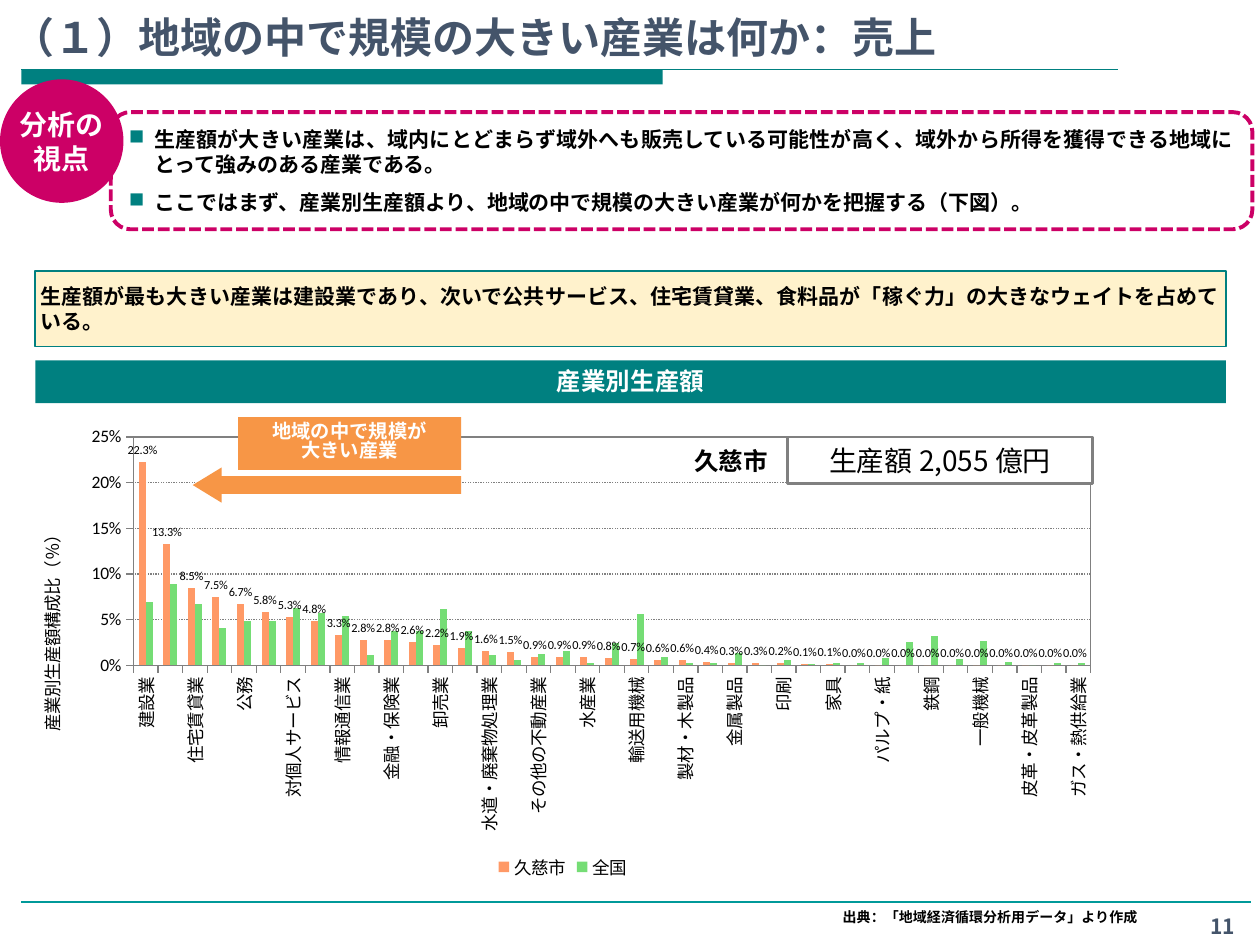
from dataclasses import dataclass
from typing import Optional

import lxml.etree
import pptx
import pptx.chart.data
import pptx.dml.color
import pptx.enum.chart
import pptx.enum.dml
import pptx.enum.shapes
import pptx.enum.text
import pptx.oxml.ns
import pptx.util

Align = pptx.enum.text.PP_ALIGN
Anchor = pptx.enum.text.MSO_ANCHOR
Preset = pptx.enum.shapes.MSO_SHAPE
Dash = pptx.enum.dml.MSO_LINE
Pt = pptx.util.Pt
qualified = pptx.oxml.ns.qn


@dataclass(frozen=True)
class Theme:
    font: str = "Noto Sans CJK JP"
    chart_font: str = "Calibri"
    teal: str = "008080"
    rule: str = "009999"
    magenta: str = "CC0066"
    navy: str = "44546A"
    cream: str = "FFF2CC"
    orange: str = "F79646"
    gray: str = "808080"
    black: str = "000000"
    white: str = "FFFFFF"
    city: str = "FF9966"
    nation: str = "75DD75"
    title: float = 24
    large: float = 16
    heading: float = 14
    body: float = 12
    callout: float = 11
    axis: float = 10
    source: float = 8
    label: float = 7


@dataclass(frozen=True)
class Area:
    column: float
    row: float
    columns: float
    rows: float

    def place(self) -> tuple:
        return tuple(map(cell, (self.column, self.row, self.columns, self.rows)))


@dataclass(frozen=True)
class Panel:
    preset: Preset
    area: Area
    fill: Optional[str] = None
    line: Optional[str] = None
    weight: float = 1
    dash: Optional[Dash] = None


THEME = Theme()
COLUMNS, ROWS = 100, 75
CELL = pptx.util.Inches(10) / COLUMNS
CITY = "久慈市"
NARROW = (0.4, 0.5)

INDUSTRIES = (
    "建設業 公共サービス 住宅賃貸業 食料品 公務 小売業 対個人サービス 対事業所サービス "
    "情報通信業 農業 金融・保険業 運輸業 卸売業 電気機械 水道・廃棄物処理業 窯業・土石製品 "
    "その他の不動産業 その他の製造業 水産業 石油・石炭製品 輸送用機械 電気業 製材・木製品 "
    "衣服・身回品 金属製品 林業 印刷 鉱業 家具 繊維 パルプ・紙 化学 鉄鋼 非鉄金属 "
    "一般機械 精密機械 皮革・皮革製品 ゴム製品 ガス・熱供給業"
).split()
CITY_SHARES = [
    0.223, 0.133, 0.085, 0.075, 0.067, 0.058, 0.053, 0.048, 0.033, 0.028,
    0.028, 0.026, 0.022, 0.019, 0.016, 0.015, 0.009, 0.009, 0.009, 0.008,
    0.007, 0.006, 0.006, 0.004, 0.003, 0.003, 0.002, 0.001, 0.001,
] + [0] * 10
NATION_SHARES = [
    0.069, 0.089, 0.067, 0.041, 0.048, 0.049, 0.063, 0.057, 0.054, 0.011,
    0.038, 0.038, 0.062, 0.038, 0.011, 0.006, 0.012, 0.016, 0.002, 0.025,
    0.056, 0.009, 0.002, 0.002, 0.014, 0, 0.006, 0.001, 0.002, 0.002,
    0.008, 0.026, 0.032, 0.007, 0.027, 0.004, 0, 0.003, 0.002,
]


def cell(count: float) -> int:
    return round(count * CELL)


def color(value: str) -> pptx.dml.color.RGBColor:
    return pptx.dml.color.RGBColor.from_string(value)


def element(parent, tag: str, **attributes: str):
    return lxml.etree.SubElement(parent, qualified(tag), **attributes)


def add_bullet(paragraph) -> None:
    properties = paragraph._p.get_or_add_pPr()
    properties.set("marL", str(cell(2)))
    properties.set("indent", str(cell(-2)))
    element(element(properties, "a:buClr"), "a:srgbClr", val=THEME.teal)
    element(properties, "a:buChar", char="■")


def write(box, text: str, *, size: float, ink: str = THEME.black, bold: bool = True,
          align: Align = Align.LEFT, anchor: Anchor = Anchor.TOP, wrap: bool = True,
          insets: tuple = (1, 0.5), bullet: bool = False, leading: Optional[float] = None) -> None:
    frame = box.text_frame
    frame.word_wrap = wrap
    frame.vertical_anchor = anchor
    frame.margin_left = frame.margin_right = cell(insets[0])
    frame.margin_top = frame.margin_bottom = cell(insets[1])
    for index, line in enumerate(text.split("\n")):
        paragraph = frame.add_paragraph() if index else frame.paragraphs[0]
        paragraph.text = line
        paragraph.alignment = align
        if bullet:
            add_bullet(paragraph)
            paragraph.space_before = Pt(3 if index else 0)
            paragraph.space_after = Pt(4)
        if leading:
            paragraph.line_spacing = Pt(leading)
        for line_break in paragraph._p.findall(qualified("a:br")):
            element(line_break, "a:rPr", sz=str(int(size * 100)))
        for span in paragraph.runs:
            span.font.size = Pt(size)
            span.font.bold = bold
            span.font.name = THEME.font
            span.font.color.rgb = color(ink)
            element(span.font._element, "a:ea", typeface=THEME.font)


def draw_panel(page, panel: Panel):
    box = page.shapes.add_shape(panel.preset, *panel.area.place())
    box.shadow.inherit = False
    if panel.fill:
        box.fill.solid()
        box.fill.fore_color.rgb = color(panel.fill)
    else:
        box.fill.background()
    if panel.line:
        box.line.color.rgb = color(panel.line)
        box.line.width = Pt(panel.weight)
        if panel.dash:
            box.line.dash_style = panel.dash
    else:
        box.line.fill.background()
    return box


def draw_text(page, area: Area):
    return page.shapes.add_textbox(*area.place())


def draw_rule(page, start: float, end: float, row: float, ink: str) -> None:
    rule = page.shapes.add_connector(pptx.enum.shapes.MSO_CONNECTOR.STRAIGHT,
                                     cell(start), cell(row), cell(end), cell(row))
    rule.line.color.rgb = color(ink)
    rule.line.width = Pt(0.75)
    element(rule._element.spPr, "a:effectLst")


def set_plot_area(chart, left: float, top: float, width: float, height: float) -> None:
    plot_area = chart._chartSpace.chart.plotArea
    for old in plot_area.findall(qualified("c:layout")):
        plot_area.remove(old)
    layout = lxml.etree.Element(qualified("c:layout"))
    plot_area.insert(0, layout)
    manual = element(layout, "c:manualLayout")
    settings = dict(layoutTarget="inner", xMode="edge", yMode="edge",
                    x=left, y=top, w=width, h=height)
    for name, value in settings.items():
        element(manual, f"c:{name}", val=str(value))
    outline = element(element(plot_area, "c:spPr"), "a:ln", w=str(Pt(0.75)))
    element(element(outline, "a:solidFill"), "a:srgbClr", val=THEME.gray)


def draw_chart(page, area: Area) -> None:
    data = pptx.chart.data.CategoryChartData()
    data.categories = INDUSTRIES
    data.add_series(CITY, CITY_SHARES)
    data.add_series("全国", NATION_SHARES)
    chart = page.shapes.add_chart(pptx.enum.chart.XL_CHART_TYPE.COLUMN_CLUSTERED,
                                  *area.place(), data).chart
    chart.has_title = False
    chart.font.name = THEME.chart_font
    chart.font.size = Pt(THEME.axis)
    chart.font.color.rgb = color(THEME.black)
    chart.has_legend = True
    chart.legend.position = pptx.enum.chart.XL_LEGEND_POSITION.BOTTOM
    chart.legend.include_in_layout = False

    plot = chart.plots[0]
    plot.gap_width, plot.overlap, plot.vary_by_categories = 150, 0, False
    for series, ink in zip(plot.series, (THEME.city, THEME.nation)):
        series.invert_if_negative = False
        series.format.fill.solid()
        series.format.fill.fore_color.rgb = color(ink)
    labels = plot.series[0].data_labels
    labels.show_value = True
    labels.number_format, labels.number_format_is_linked = "0.0%", False
    labels.position = pptx.enum.chart.XL_LABEL_POSITION.OUTSIDE_END
    labels.font.size = Pt(THEME.label)

    shares, industries = chart.value_axis, chart.category_axis
    shares.minimum_scale, shares.maximum_scale, shares.major_unit = 0, 0.25, 0.05
    shares.tick_labels.number_format = "0%"
    shares.tick_labels.number_format_is_linked = False
    shares.major_gridlines.format.line.color.rgb = color(THEME.gray)
    shares.major_gridlines.format.line.dash_style = Dash.ROUND_DOT
    shares.major_gridlines.format.line.width = Pt(0.75)
    title = shares.axis_title.text_frame
    title.text = "産業別生産額構成比（％）"
    title.paragraphs[0].font.size = Pt(THEME.axis)
    title.paragraphs[0].font.bold = False
    for axis in (shares, industries):
        axis.major_tick_mark = pptx.enum.chart.XL_TICK_MARK.OUTSIDE
        axis.format.line.color.rgb = color(THEME.gray)
    industries.tick_labels.font.size = Pt(THEME.axis)
    industries._element.txPr.bodyPr.set("rot", "-5400000")
    set_plot_area(chart, 0.11, 0.04, 0.87, 0.49)


def main() -> None:
    deck = pptx.Presentation()
    deck.slide_width, deck.slide_height = cell(COLUMNS), cell(ROWS)
    page = deck.slides.add_slide(deck.slide_layouts[6])

    draw_panel(page, Panel(Preset.RECTANGLE, Area(1.7, 5.5, 50.9, 1.2), THEME.teal))
    draw_rule(page, 1.7, 88.7, 5.5, THEME.teal)
    draw_rule(page, 1.7, 99.3, 71.6, THEME.rule)
    draw_chart(page, Area(1, 33.2, 87.3, 37))

    write(draw_text(page, Area(0, 0, 86.9, 5.4)), "（１）地域の中で規模の大きい産業は何か：売上",
          size=THEME.title, ink=THEME.navy, anchor=Anchor.BOTTOM)
    write(draw_text(page, Area(65.9, 71.6, 25.7, 2.4)),
          "出典：「地域経済循環分析用データ」より作成", size=THEME.source)

    heading = draw_panel(page, Panel(Preset.RECTANGLE, Area(2.8, 28.6, 94.5, 3.4), THEME.teal))
    write(heading, "産業別生産額", size=THEME.heading, ink=THEME.white, align=Align.CENTER)

    finding = draw_panel(page, Panel(Preset.RECTANGLE, Area(2.8, 21.5, 94.5, 6),
                                     THEME.cream, THEME.teal))
    write(finding, "生産額が最も大きい産業は建設業であり、次いで公共サービス、住宅賃貸業、食料品が"
          "「稼ぐ力」の大きなウェイトを占めている。", size=THEME.body, align=Align.JUSTIFY,
          anchor=Anchor.MIDDLE, insets=NARROW)

    arrow = draw_panel(page, Panel(Preset.LEFT_ARROW, Area(15.3, 37.1, 21.3, 2.8), THEME.orange))
    arrow.adjustments[0], arrow.adjustments[1] = 0.5, 0.82
    callout = draw_panel(page, Panel(Preset.RECTANGLE, Area(18.9, 33.1, 17.7, 4.2), THEME.orange))
    write(callout, "地域の中で規模が\n大きい産業", size=THEME.callout, ink=THEME.white,
          align=Align.CENTER, leading=THEME.callout)

    write(draw_text(page, Area(94.1, 72, 5.9, 2.8)), "11", size=THEME.body,
          ink=THEME.navy, align=Align.CENTER)

    viewpoint = draw_panel(page, Panel(Preset.ROUNDED_RECTANGLE, Area(8.8, 8.9, 90.6, 9.3),
                                       None, THEME.magenta, 2.25, Dash.SQUARE_DOT))
    write(viewpoint, "生産額が大きい産業は、域内にとどまらず域外へも販売している可能性が高く、"
          "域外から所得を獲得できる地域にとって強みのある産業である。\n"
          "ここではまず、産業別生産額より、地域の中で規模の大きい産業が何かを把握する（下図）。",
          size=THEME.body, align=Align.JUSTIFY, anchor=Anchor.MIDDLE, bullet=True)

    badge = draw_panel(page, Panel(Preset.OVAL, Area(0, 6.3, 9.8, 9.8), THEME.magenta))
    write(badge, "分析の\v視点", size=THEME.large, ink=THEME.white, align=Align.CENTER,
          anchor=Anchor.MIDDLE, wrap=False, insets=NARROW)

    total = draw_panel(page, Panel(Preset.RECTANGLE, Area(62.5, 34.7, 24.2, 3.7),
                                   THEME.white, THEME.gray, 1.5))
    write(total, "生産額 2,055 億円", size=THEME.large, bold=False, align=Align.CENTER)
    write(draw_text(page, Area(54.1, 34.9, 7.9, 3.4)), CITY, size=THEME.heading, wrap=False)

    deck.save("out.pptx")


if __name__ == "__main__":
    main()
